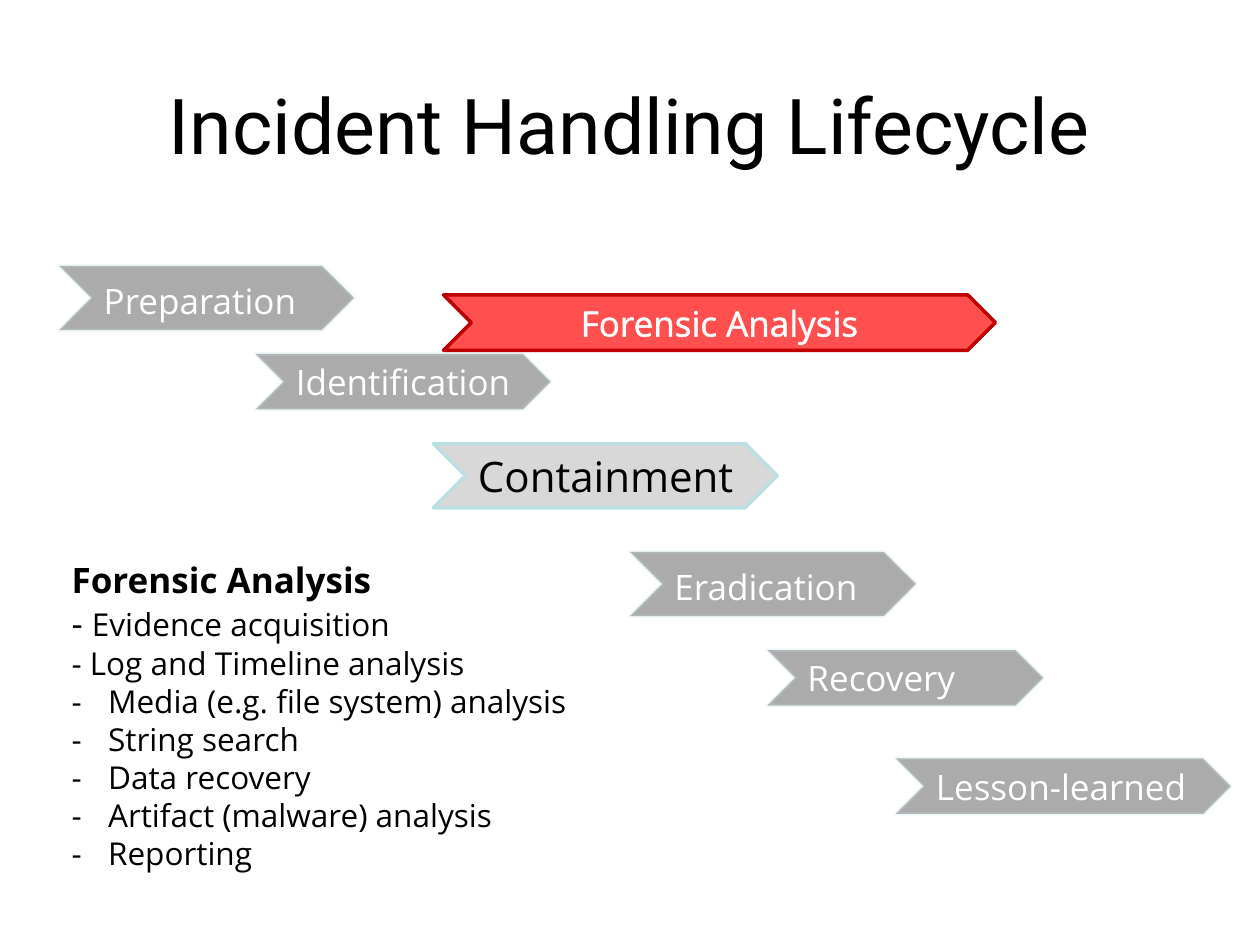
from dataclasses import dataclass

from lxml.etree import SubElement
from pptx import Presentation
from pptx.dml.color import RGBColor as Rgb
from pptx.enum.shapes import MSO_SHAPE as Shape
from pptx.enum.text import MSO_ANCHOR as Anchor, PP_ALIGN as Align
from pptx.oxml import parse_xml
from pptx.oxml.ns import nsdecls, qn
from pptx.util import Inches, Pt


@dataclass(frozen=True)
class Theme:
    head: str = "Roboto"
    body: str = "Open Sans"
    black: str = "000000"
    white: str = "FFFFFF"
    dim: str = "737373"
    light: str = "BFBFBF"
    edge: str = "BBE0E3"
    red: str = "FF0000"
    rim: str = "C00000"
    title: int = 44
    big: int = 24
    mid: int = 20
    small: int = 18


T = Theme()


def add_run(para, text, size, color, font=T.body, bold=False):
    run = para.add_run()
    run.text = text
    run.font.name, run.font.size, run.font.bold = font, Pt(size), bold
    run.font.color.rgb = Rgb.from_string(color)
    return run


def paint(fill, color, alpha=100):
    fill.solid()
    fill.fore_color.rgb = Rgb.from_string(color)
    if alpha < 100:
        tone = fill._xPr.find(qn("a:solidFill"))[0]
        SubElement(tone, qn("a:alpha"), val=str(alpha * 1000))


def add_box(slide, box):
    frame = slide.shapes.add_textbox(*map(Inches, box)).text_frame
    frame.word_wrap = True
    return frame


def add_title(slide, box, text):
    frame = add_box(slide, box)
    frame.vertical_anchor = Anchor.MIDDLE
    para = frame.paragraphs[0]
    para.alignment = Align.CENTER
    add_run(para, text, T.title, T.black, T.head)


def add_step(slide, box, text, fill=T.dim, alpha=60, line=T.edge, shade=21,
             size=T.mid, color=T.white, align=Align.LEFT):
    step = slide.shapes.add_shape(Shape.CHEVRON, *map(Inches, box))
    step.shadow.inherit = False
    paint(step.fill, fill, alpha)
    step.line.width = Pt(2)
    paint(step.line.fill, line, shade)
    frame = step.text_frame
    frame.word_wrap = True
    frame.vertical_anchor = Anchor.MIDDLE
    # Left-aligned labels may run up to the point
    if align == Align.LEFT:
        frame.margin_right = 0
    para = frame.paragraphs[0]
    para.alignment = align
    return para, add_run(para, text, size, color)


def add_cycle(slide, left, top):
    tall, low = 0.51, 0.44
    # Dimmed steps: offset, size, label
    for x, y, w, h, text in [
        (0, 0, 2.34, tall, "Preparation"),
        (1.56, 0.7, 2.34, low, "Identification"),
        (4.53, 2.27, 2.27, tall, "Eradication"),
        (5.62, 3.05, 2.19, low, "Recovery"),
        (6.64, 3.91, 2.66, low, "Lesson-learned"),
    ]:
        para, _ = add_step(slide, (left + x, top + y, w, h), text)
        if h == tall:
            add_run(para, " ", T.big, T.white)
    # Current step
    add_step(slide, (left + 2.97, top + 1.41, 2.73, tall), "Containment",
             T.light, shade=100, size=T.big, color=T.black)
    # Highlighted activity, with outlined letters
    _, run = add_step(slide, (left + 3.05, top + 0.23, 4.38, low),
                      "Forensic Analysis", T.red, 69, T.rim, 100,
                      align=Align.CENTER)
    run.font._element.insert(0, parse_xml(
        f'<a:ln {nsdecls("a")} w="18415"><a:solidFill>'
        f'<a:srgbClr val="{T.white}"/></a:solidFill></a:ln>'))


def add_notes(slide, box, title, plain, items):
    frame = add_box(slide, box)

    def add_line(pitch):
        para = frame.add_paragraph() if frame.text else frame.paragraphs[0]
        para.line_spacing = Pt(pitch)
        return para

    # Heading and typed dashes
    wide, tight = 24.5, 21.7
    add_run(add_line(wide), title, T.mid, T.black, bold=True)
    first, *rest = plain
    para = add_line(wide)
    add_run(para, "- ", T.mid, T.black)
    add_run(para, first, T.small, T.black)
    for text in rest:
        add_run(add_line(tight), "- " + text, T.small, T.black)
    # Dash bullets
    for text in items:
        para = add_line(tight)
        props = para._p.get_or_add_pPr()
        props.set("marL", str(Inches(0.29)))
        props.set("indent", str(Inches(-0.29)))
        SubElement(props, qn("a:buFont"), typeface=T.body)
        SubElement(props, qn("a:buChar"), char="-")
        add_run(para, text, T.small, T.black)


def main():
    deck = Presentation()
    deck.slide_width, deck.slide_height = Inches(10), Inches(7.5)
    slide = deck.slides.add_slide(deck.slide_layouts[6])
    paint(slide.background.fill, T.white)
    add_title(slide, (0.75, 0.36, 8.5, 1.25), "Incident Handling Lifecycle")
    add_cycle(slide, 0.47, 2.11)
    add_notes(slide, (0.47, 4.38, 4.3, 2.59), "Forensic Analysis",
              ["Evidence acquisition", "Log and Timeline analysis"],
              ["Media (e.g. file system) analysis", "String search",
               "Data recovery", "Artifact (malware) analysis", "Reporting"])
    deck.save("out.pptx")


if __name__ == "__main__":
    main()
